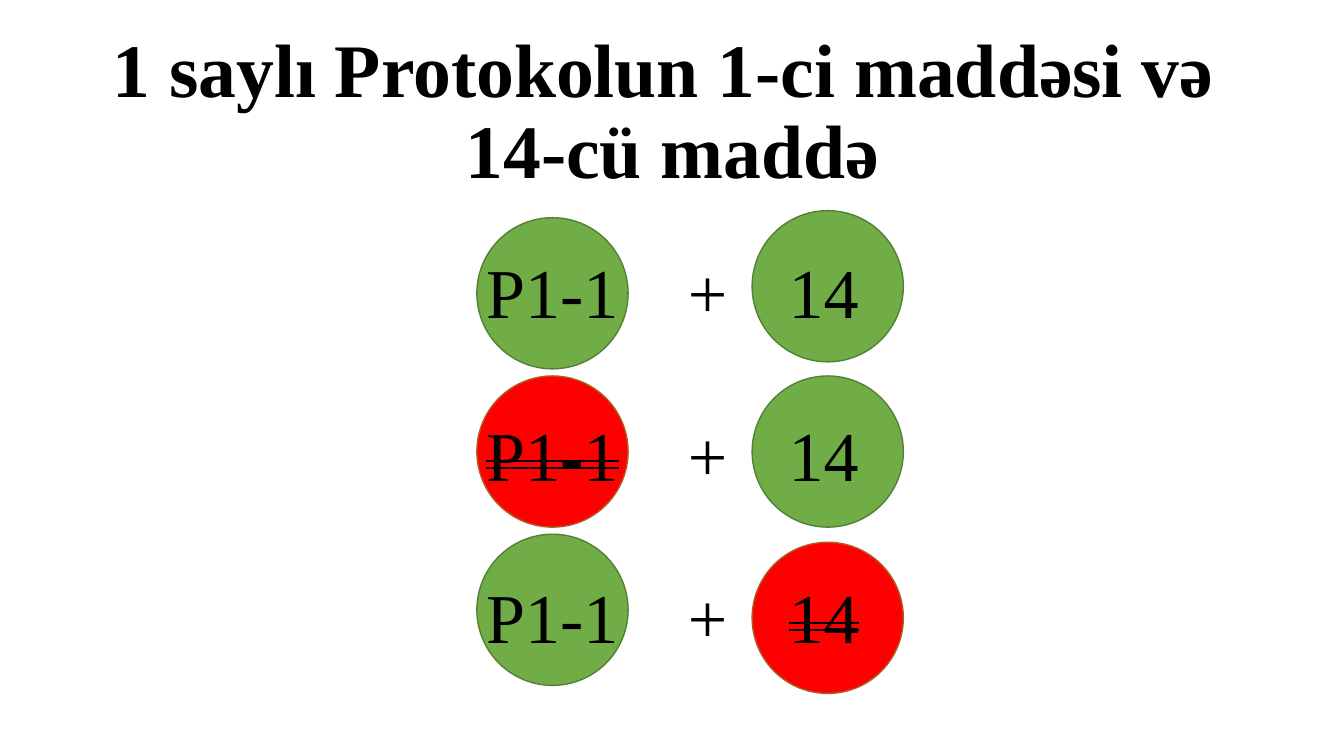
import pptx
import pptx.dml.color
import pptx.enum.shapes
import pptx.enum.text
import pptx.oxml
import pptx.oxml.ns
import pptx.util

PX = 9144  # 100 px to the inch
FONT = "Times New Roman"
BLACK = "000000"
APPLIES = ("70AD47", "538035")
EXCLUDED = ("FF0000", "AF5C24")


def rgb(value):
    return pptx.dml.color.RGBColor.from_string(value)


def place_text(placeholder, left, top, width, height):
    """Move a placeholder, clear its autofit and bring it to the front."""
    placeholder.left, placeholder.top = left * PX, top * PX
    placeholder.width, placeholder.height = width * PX, height * PX
    placeholder.text_frame.auto_size = pptx.enum.text.MSO_AUTO_SIZE.NONE
    slide.shapes.element.append(placeholder.element)
    return placeholder.text_frame


deck = pptx.Presentation()
deck.slide_width, deck.slide_height = 1333 * PX, 750 * PX
slide = deck.slides.add_slide(deck.slide_layouts[1])

# Each circle: left, top, (fill, outline)
circles = [
    (746, 538, EXCLUDED),
    (473, 373, EXCLUDED),
    (473, 530, APPLIES),
    (473, 216, APPLIES),
    (746, 373, APPLIES),
    (746, 209, APPLIES),
]
for left, top, (fill, outline) in circles:
    circle = slide.shapes.add_shape(
        pptx.enum.shapes.MSO_SHAPE.OVAL, left * PX, top * PX, 150 * PX, 150 * PX)
    circle.shadow.inherit = False
    circle.fill.solid()
    circle.fill.fore_color.rgb = rgb(fill)
    circle.line.color.rgb = rgb(outline)
    circle.line.width = pptx.util.Pt(1)

title = place_text(slide.shapes.title, 92, 40, 1150, 145)
title.vertical_anchor = pptx.enum.text.MSO_ANCHOR.MIDDLE
heading = title.paragraphs[0]
heading.text = "1 saylı Protokolun 1-ci maddəsi və \v14-cü maddə"
heading.alignment = pptx.enum.text.PP_ALIGN.CENTER
heading.line_spacing = 0.9
heading.font.name = FONT
heading.font.size = pptx.util.Pt(54)
heading.font.bold = True
heading.font.color.rgb = rgb(BLACK)

# Each combination: the articles and the one struck out
combinations = place_text(slide.placeholders[1], 92, 258, 1150, 414)
for row, struck in enumerate([None, "P1-1", "14"]):
    line = combinations.paragraphs[0] if row == 0 else combinations.add_paragraph()
    for part in ["P1-1", "\t+\t", "14"]:
        run = line.add_run()
        run.text = part
        if part == struck:
            run.font._element.set("strike", "dblStrike")
    line.alignment = pptx.enum.text.PP_ALIGN.CENTER
    line.line_spacing = 0.8
    line.space_before = pptx.util.Pt(68 if row else 10)
    line.font.name = FONT
    line.font.size = pptx.util.Pt(50)
    line.font.color.rgb = rgb(BLACK)
    properties = line._p.get_or_add_pPr()
    properties.set("marL", "0")
    properties.set("indent", "0")
    properties.set("defTabSz", str(100 * PX))
    no_bullet = pptx.oxml.parse_xml(f"<a:buNone {pptx.oxml.ns.nsdecls('a')}/>")
    properties.find(pptx.oxml.ns.qn("a:defRPr")).addprevious(no_bullet)

deck.save("out.pptx")
